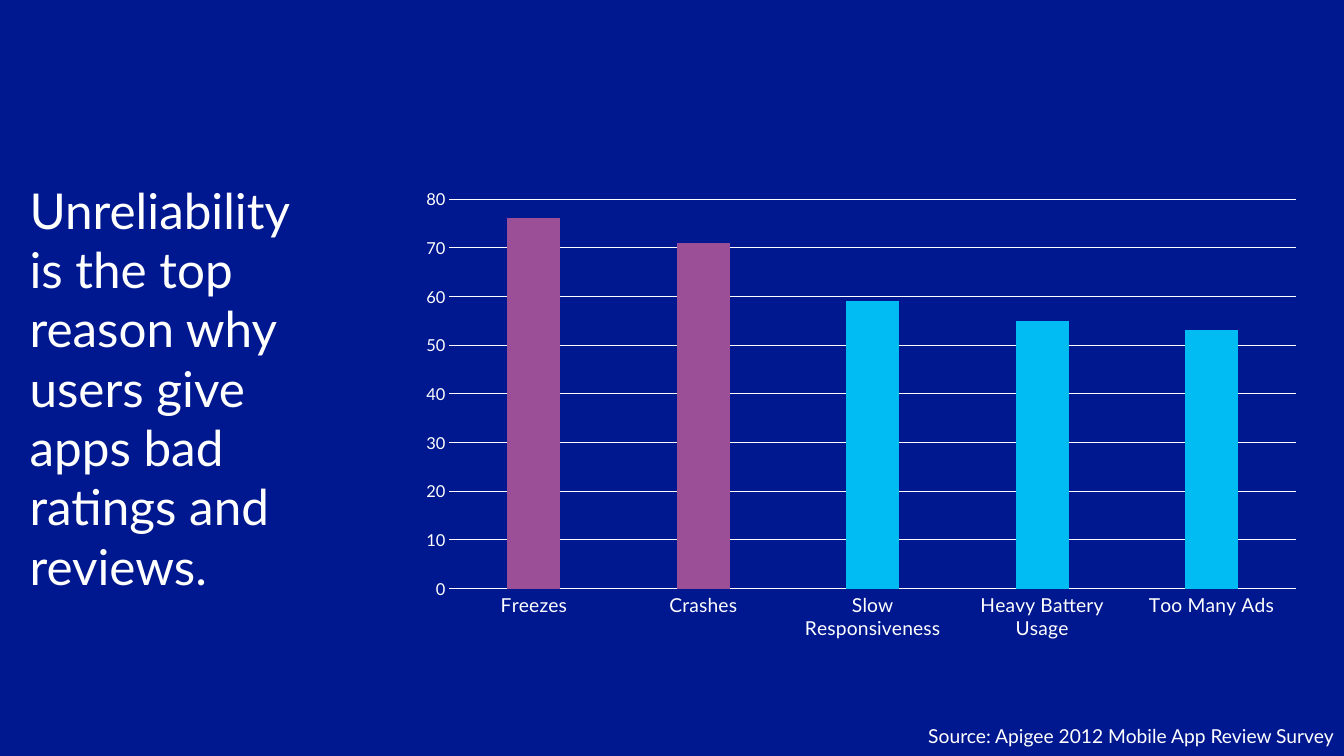
from dataclasses import dataclass

from pptx import Presentation
from pptx.chart.data import CategoryChartData
from pptx.dml.color import RGBColor
from pptx.enum.chart import XL_CHART_TYPE as ChartType, XL_TICK_MARK as Tick
from pptx.enum.text import MSO_ANCHOR as Anchor, PP_ALIGN as Align
from pptx.slide import Slide
from pptx.util import Pt


@dataclass(frozen=True)
class Theme:
    font: str = "Lato"
    background: RGBColor = RGBColor(0x00, 0x18, 0x8F)
    text: RGBColor = RGBColor(0xFF, 0xFF, 0xFF)
    bar: RGBColor = RGBColor(0x00, 0xBC, 0xF2)
    highlight: RGBColor = RGBColor(0x9B, 0x4F, 0x96)
    message_size: float = 36
    label_size: float = 14
    scale_size: float = 12
    chart_size: float = 10
    line_width: float = 0.75


@dataclass(frozen=True)
class Box:
    left: float
    top: float
    width: float
    height: float

    def lengths(self) -> tuple[Pt, Pt, Pt, Pt]:
        return Pt(self.left), Pt(self.top), Pt(self.width), Pt(self.height)


@dataclass(frozen=True)
class Label:
    text: str
    box: Box
    size: float
    align: Align
    inset_x: float = 0
    inset_y: float = 0
    wrap: bool = True


@dataclass(frozen=True)
class Complaint:
    name: str
    share: int
    unreliable: bool = False


THEME = Theme()
CHART_BOX = Box(297.36, 131.04, 660.24, 342)
LABELS = [
    Label(
        "Unreliability is the top reason why users give apps bad ratings and reviews.",
        Box(21.6, 131.04, 216, 396), THEME.message_size, Align.LEFT,
    ),
    Label(
        "Source: Apigee 2012 Mobile App Review Survey",
        Box(666.72, 524.16, 312.48, 24.48), THEME.label_size, Align.RIGHT,
        inset_x=7.2, inset_y=3.6, wrap=False,
    ),
]
COMPLAINTS = [
    Complaint("Freezes", 76, True),
    Complaint("Crashes", 71, True),
    Complaint("Slow Responsiveness", 59),
    Complaint("Heavy Battery Usage", 55),
    Complaint("Too Many Ads", 53),
]


def set_font(font, size: float) -> None:
    font.name = THEME.font
    font.size = Pt(size)
    font.color.rgb = THEME.text


def set_line(line) -> None:
    line.color.rgb = THEME.text
    line.width = Pt(THEME.line_width)


def add_label(s: Slide, label: Label) -> None:
    tf = s.shapes.add_textbox(*label.box.lengths()).text_frame
    tf.word_wrap = label.wrap
    tf.vertical_anchor = Anchor.TOP
    tf.margin_left = tf.margin_right = Pt(label.inset_x)
    tf.margin_top = tf.margin_bottom = Pt(label.inset_y)
    tf.text = label.text
    p = tf.paragraphs[0]
    p.alignment = label.align
    set_font(p.runs[0].font, label.size)


def add_complaint_chart(s: Slide, box: Box, complaints: list[Complaint]) -> None:
    data = CategoryChartData()
    data.categories = [c.name for c in complaints]
    data.add_series("Series 1", [c.share for c in complaints])
    chart = s.shapes.add_chart(ChartType.COLUMN_CLUSTERED, *box.lengths(), data).chart
    chart.has_legend = False
    chart.has_title = False
    set_font(chart.font, THEME.chart_size)

    for axis, size in (
        (chart.category_axis, THEME.label_size),
        (chart.value_axis, THEME.scale_size),
    ):
        axis.major_tick_mark = axis.minor_tick_mark = Tick.NONE
        set_font(axis.tick_labels.font, size)
    set_line(chart.category_axis.format.line)
    scale = chart.value_axis
    scale.minimum_scale, scale.maximum_scale, scale.major_unit = 0, 80, 10
    scale.format.line.fill.background()
    scale.has_major_gridlines = True
    set_line(scale.major_gridlines.format.line)

    plot = chart.plots[0]
    plot.gap_width = 219
    plot.overlap = -27
    plot.vary_by_categories = False
    series = plot.series[0]
    series.format.fill.solid()
    series.format.fill.fore_color.rgb = THEME.bar
    for i, complaint in enumerate(complaints):
        if complaint.unreliable:
            fill = series.points[i].format.fill
            fill.solid()
            fill.fore_color.rgb = THEME.highlight


def main() -> None:
    prs = Presentation()
    prs.slide_width, prs.slide_height = Pt(979.2), Pt(550.8)
    s = prs.slides.add_slide(prs.slide_layouts[6])
    s.background.fill.solid()
    s.background.fill.fore_color.rgb = THEME.background
    message, source = LABELS
    add_label(s, message)
    add_complaint_chart(s, CHART_BOX, COMPLAINTS)
    add_label(s, source)
    prs.save("out.pptx")


if __name__ == "__main__":
    main()
